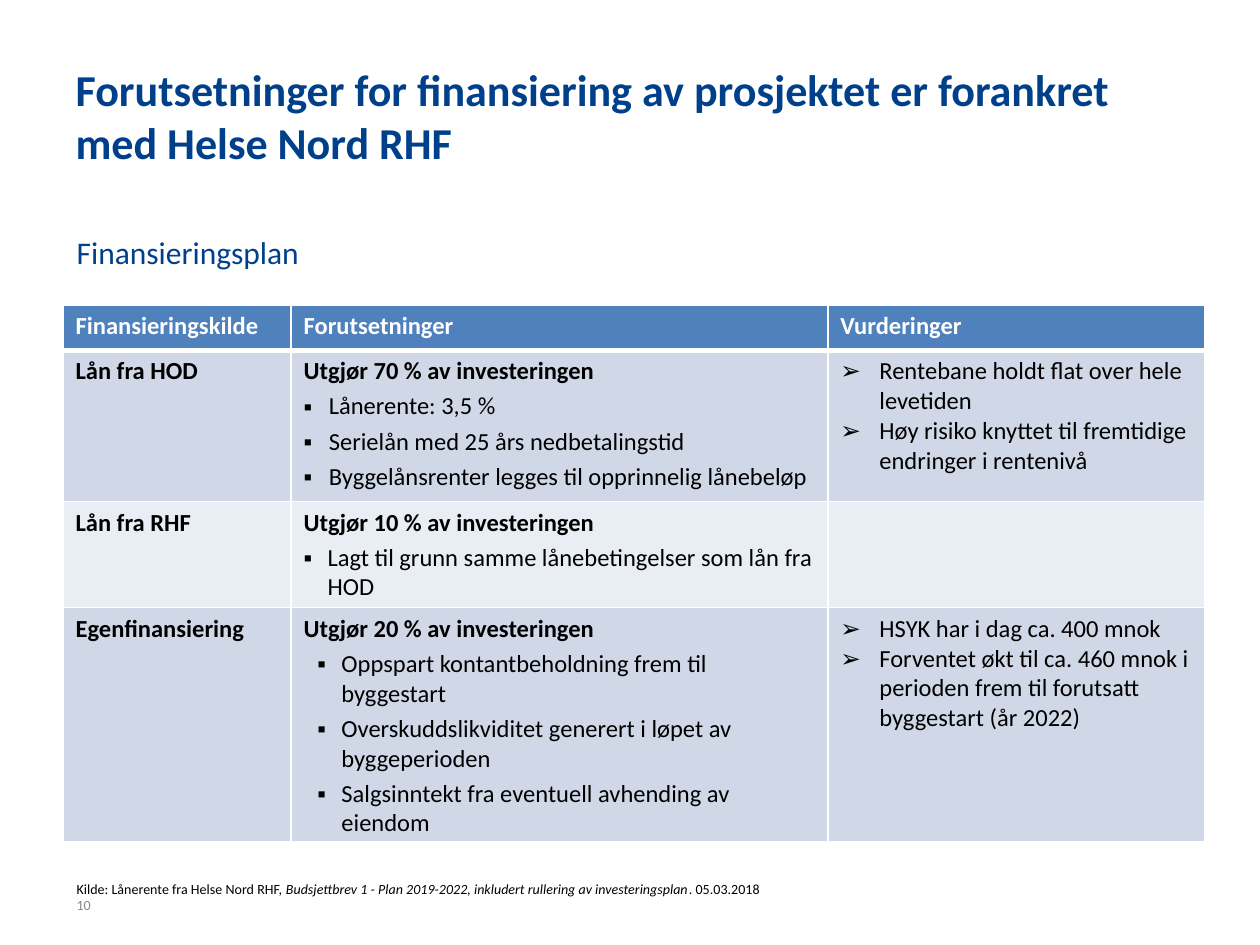
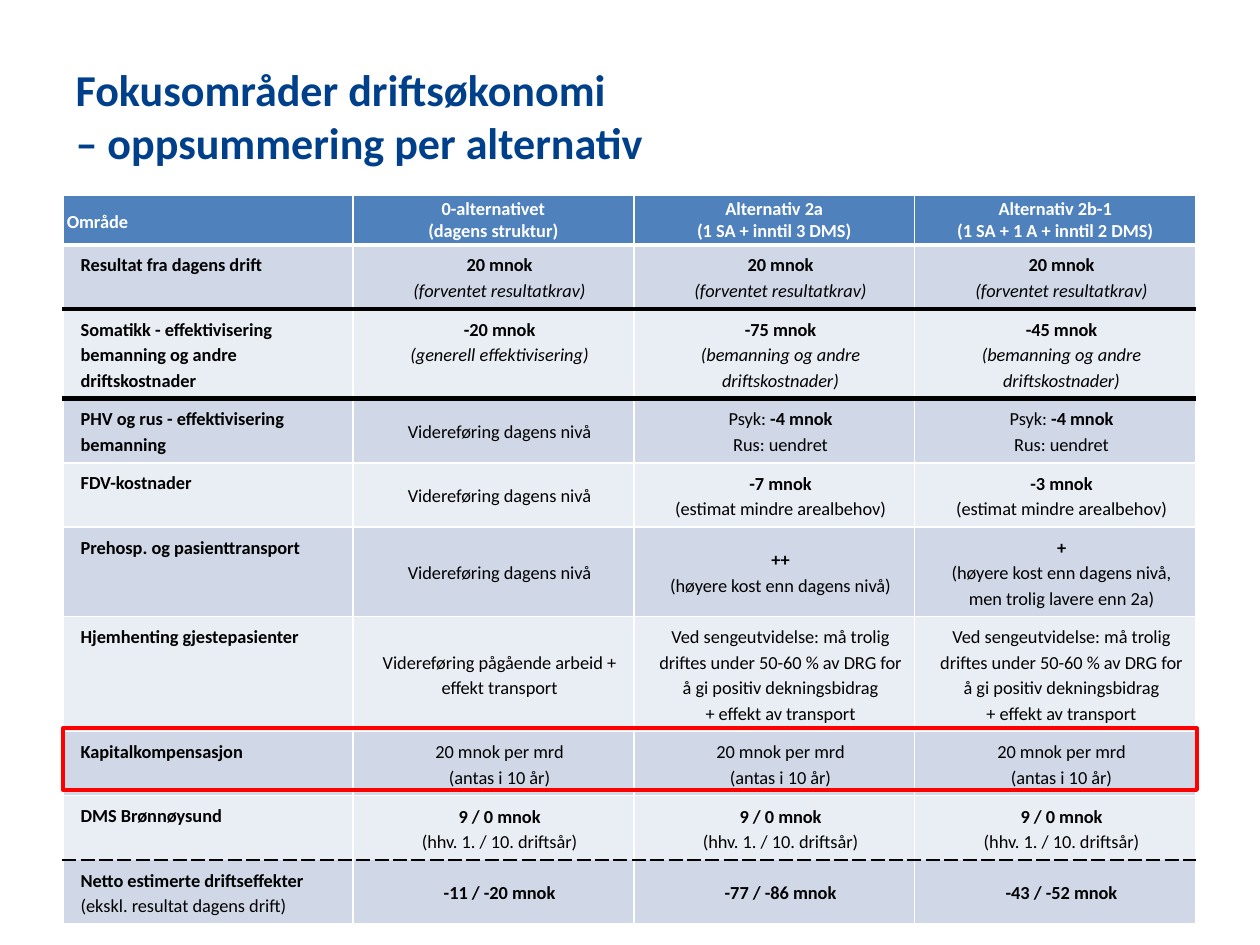
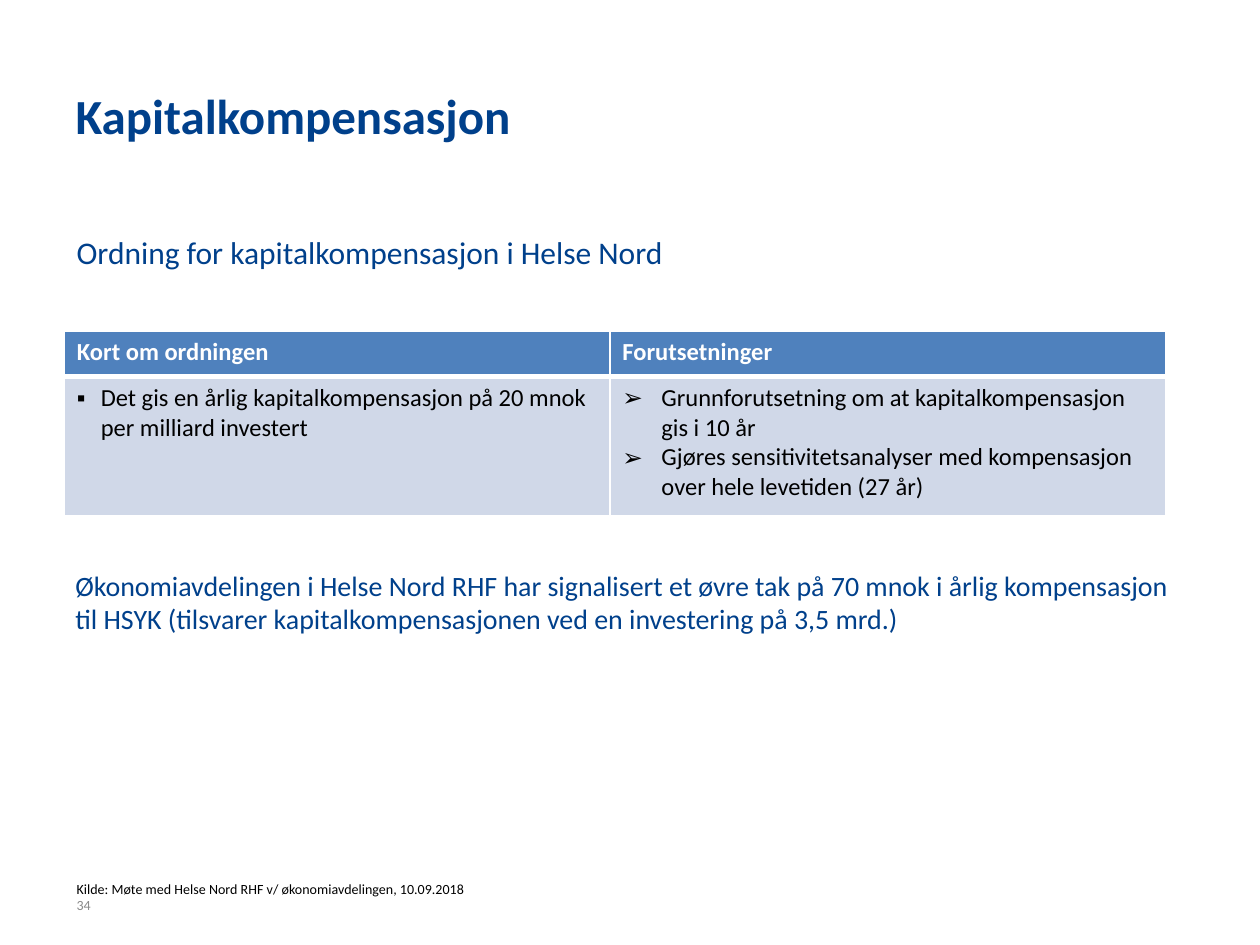
from dataclasses import dataclass

from lxml import etree
from pptx import Presentation
from pptx.dml.color import RGBColor
from pptx.enum.shapes import MSO_SHAPE
from pptx.enum.text import MSO_ANCHOR, MSO_AUTO_SIZE, PP_ALIGN
from pptx.oxml.ns import qn
from pptx.util import Inches, Pt

LEFT, CENTER = PP_ALIGN.LEFT, PP_ALIGN.CENTER
TOP, MIDDLE = MSO_ANCHOR.TOP, MSO_ANCHOR.MIDDLE
NO_AUTOFIT = MSO_AUTO_SIZE.NONE
RECTANGLE = MSO_SHAPE.RECTANGLE

FONT = "Calibri"
COLORS = {
    "heading": "00408B",
    "header": "4F81BD",
    "band_dark": "D0D8E8",
    "band_light": "E9EDF4",
    "white": "FFFFFF",
    "black": "000000",
    "page": "898989",
    "highlight": "FF0000",
}
TITLE_BOX = (0.5, 0.52, 9, 0.79)
SUBTITLE_BOX = (0.51, 1.8, 9.21, 0.62)
SOURCE_BOX = (0.51, 6.92, 7, 0.26)
PAGE_BOX = (0.51, 6.98, 2.33, 0.4)


@dataclass
class Line:
    """A paragraph: runs are (text, style), where style holds b and/or i."""
    runs: list
    bullet: str = ""
    left: float = 0
    hanging: float = 0
    after: float = 0
    spacing: float = 1
    align: int = LEFT


def plain(text, **layout):
    return Line([(text, "")], **layout)


def bold(text, **layout):
    return Line([(text, "b")], **layout)


def italic(text, **layout):
    return Line([(text, "i")], **layout)


def square(text, left=0.19, hanging=0.19):
    return plain(text, bullet="▪", left=left, hanging=hanging, after=3)


def arrow(text):
    return plain(text, bullet="➢", left=0.31, hanging=0.31)


def rgb(name):
    return RGBColor.from_string(COLORS[name])


def add_bullet(paragraph, line):
    properties = paragraph._p.get_or_add_pPr()
    properties.set("marL", str(Inches(line.left)))
    properties.set("indent", str(-Inches(line.hanging)))
    if line.bullet:
        etree.SubElement(properties, qn("a:buFont"), typeface="Arial")
        etree.SubElement(properties, qn("a:buChar"), char=line.bullet)


def write(frame, lines, size, color):
    for number, line in enumerate(lines):
        paragraph = frame.add_paragraph() if number else frame.paragraphs[0]
        add_bullet(paragraph, line)
        paragraph.alignment = line.align
        paragraph.line_spacing = line.spacing
        paragraph.space_before = Pt(0)
        paragraph.space_after = Pt(line.after)
        for text, style in line.runs:
            run = paragraph.add_run()
            run.text = text
            run.font.name = FONT
            run.font.size = Pt(size)
            run.font.bold = "b" in style
            run.font.italic = "i" in style
            run.font.color.rgb = rgb(color)


def add_text(slide, box, lines, size, color, anchor=TOP):
    frame = slide.shapes.add_textbox(*map(Inches, box)).text_frame
    frame.word_wrap = True
    frame.vertical_anchor = anchor
    write(frame, lines, size, color)


def add_titled_slide(deck, title_lines, size=25.2):
    slide = deck.slides.add_slide(deck.slide_layouts[5])
    title = slide.shapes.title
    title.left, title.top, title.width, title.height = map(Inches, TITLE_BOX)
    frame = title.text_frame
    frame.auto_size = NO_AUTOFIT
    frame.vertical_anchor = MIDDLE
    write(frame, [bold(text) for text in title_lines], size, "heading")
    return slide


def add_subtitle(slide, text):
    add_text(slide, SUBTITLE_BOX, [plain(text)], 18, "heading")


def add_footer(slide, source_runs, page):
    add_text(slide, PAGE_BOX, [plain(page)], 8, "page", MIDDLE)
    add_text(slide, SOURCE_BOX, [Line(source_runs, spacing=1.15)], 8, "black")


def set_border(cell, side, color="white", width=1, dash="solid"):
    """Set the border on side L, R, T or B, in that order and before the fill."""
    border = etree.SubElement(cell._tc.get_or_add_tcPr(), qn(f"a:ln{side}"), w=str(Pt(width)))
    fill = etree.SubElement(border, qn("a:solidFill"))
    etree.SubElement(fill, qn("a:srgbClr"), val=COLORS[color])
    etree.SubElement(border, qn("a:prstDash"), val=dash)


def add_grid(slide, corner, widths, heights, rows, size, rules=None):
    """Add a banded table; rules maps a row to the border below it."""
    rules = {0: {"width": 3}, **(rules or {})}
    table = slide.shapes.add_table(
        len(rows), len(widths), *map(Inches, (*corner, sum(widths), sum(heights)))
    ).table
    for column, width in zip(table.columns, widths):
        column.width = Inches(width)
    for r, (height, contents) in enumerate(zip(heights, rows)):
        table.rows[r].height = Inches(height)
        band = "header" if r == 0 else "band_dark" if r % 2 else "band_light"
        for c, lines in enumerate(contents):
            cell = table.cell(r, c)
            set_border(cell, "L")
            set_border(cell, "R")
            set_border(cell, "T", **rules.get(r - 1, {}))
            set_border(cell, "B", **rules.get(r, {}))
            cell.fill.solid()
            cell.fill.fore_color.rgb = rgb(band)
            write(cell.text_frame, lines, size, "black" if r else "white")
    return table


def build_financing(deck):
    slide = add_titled_slide(
        deck, ["Forutsetninger for finansiering av prosjektet er forankret med Helse Nord RHF"]
    )
    add_subtitle(slide, "Finansieringsplan")
    headers = ["Finansieringskilde", "Forutsetninger", "Vurderinger"]
    loan_terms = [
        "Lånerente: 3,5 %",
        "Serielån med 25 års nedbetalingstid",
        "Byggelånsrenter legges til opprinnelig lånebeløp",
    ]
    own_funds = [
        "Oppspart kontantbeholdning frem til byggestart",
        "Overskuddslikviditet generert i løpet av byggeperioden",
        "Salgsinntekt fra eventuell avhending av eiendom",
    ]
    rows = [
        [[bold(text)] for text in headers],
        [
            [bold("Lån fra HOD")],
            [bold("Utgjør 70 % av investeringen", after=3),
             *[square(text, 0.2, 0.2) for text in loan_terms]],
            [arrow("Rentebane holdt flat over hele levetiden"),
             arrow("Høy risiko knyttet til fremtidige endringer i rentenivå")],
        ],
        [
            [bold("Lån fra RHF")],
            [bold("Utgjør 10 % av investeringen", after=3),
             square("Lagt til grunn samme lånebetingelser som lån fra HOD")],
            [],
        ],
        [
            [bold("Egenfinansiering")],
            [bold("Utgjør 20 % av investeringen", after=3),
             *[square(text, left=0.3) for text in own_funds]],
            [arrow("HSYK har i dag ca. 400 mnok"),
             arrow("Forventet økt til ca. 460 mnok i perioden frem til forutsatt byggestart (år 2022)")],
        ],
    ]
    add_grid(slide, (0.5, 2.42), [1.81, 4.26, 2.99], [0.36, 1.2, 0.74, 1.31], rows, 14)
    source = [
        ("Kilde: Lånerente fra Helse Nord RHF, ", ""),
        ("Budsjettbrev 1 - Plan 2019-2022, inkludert rullering av investeringsplan", "i"),
        (". 05.03.2018", ""),
    ]
    add_footer(slide, source, "10")


def build_alternatives(deck):
    slide = add_titled_slide(deck, ["Fokusområder driftsøkonomi", "– oppsummering per alternativ"])
    value = {"left": 0.1, "spacing": 1.15, "align": CENTER}

    def amount(figure, note, note_style=plain):
        return [bold(figure, **value), note_style(note, **value)]

    def remark(*texts):
        return [plain(text, **value) for text in texts]

    def area(text, note=""):
        runs = [(text, "b")] + ([(note, "")] if note else [])
        return [Line(runs, left=0.04, spacing=1.15)]

    unchanged = remark("Videreføring dagens nivå")
    result = amount("20 mnok", "(forventet resultatkrav)", italic)
    staffing = "(bemanning og andre driftskostnader)"
    psychiatry = [Line([("Psyk: ", ""), ("-4 mnok", "b")], **value), *remark("Rus: uendret")]
    repatriation = remark(
        "Ved sengeutvidelse: må trolig driftes under 50-60 % av DRG for å gi positiv dekningsbidrag",
        "+ effekt av transport",
    )
    compensation = remark("20 mnok per mrd", "(antas i 10 år)")
    local_centre = amount("9 / 0 mnok", "(hhv. 1. / 10. driftsår)")
    alternatives = [
        ("0-alternativet", "(dagens struktur)"),
        ("Alternativ 2a", "(1 SA + inntil 3 DMS)"),
        ("Alternativ 2b-1", "(1 SA + 1 A + inntil 2 DMS)"),
    ]
    net_effects = ["-11 / -20 mnok", "-77 / -86 mnok", "-43 / -52 mnok"]
    rows = [
        [[bold("Område", spacing=1.15)],
         *[[bold(text, align=CENTER) for text in pair] for pair in alternatives]],
        [area("Resultat fra dagens drift"), *[result] * 3],
        [area("Somatikk - effektivisering bemanning og andre driftskostnader"),
         amount("-20 mnok", "(generell effektivisering)", italic),
         amount("-75 mnok", staffing, italic),
         amount("-45 mnok", staffing, italic)],
        [area("PHV og rus - effektivisering bemanning"), unchanged, *[psychiatry] * 2],
        [area("FDV-kostnader"), unchanged,
         amount("-7 mnok", "(estimat mindre arealbehov)"),
         amount("-3 mnok", "(estimat mindre arealbehov)")],
        [area("Prehosp. og pasienttransport"), unchanged,
         amount("++", "(høyere kost enn dagens nivå)"),
         amount("+", "(høyere kost enn dagens nivå, men trolig lavere enn 2a)")],
        [area("Hjemhenting gjestepasienter"),
         remark("Videreføring pågående arbeid + effekt transport"), *[repatriation] * 2],
        [area("Kapitalkompensasjon"), *[compensation] * 3],
        [area("DMS Brønnøysund"), *[local_centre] * 3],
        [area("Netto estimerte driftseffekter ", "(ekskl. resultat dagens drift)"),
         *[[bold(text, **value)] for text in net_effects]],
    ]
    thick = {"color": "black", "width": 3}
    dashed = {"color": "black", "dash": "sysDash"}
    table = add_grid(
        slide, (0.5, 1.55), [2.3] + [2.23] * 3, [0.28] + [0.51] * 8 + [0.43], rows, 10.5,
        {1: thick, 2: thick, 8: dashed},
    )
    last = len(rows) - 1
    for r in range(len(rows)):
        for c in range(4):
            cell = table.cell(r, c)
            centred = r in (0, last) or (r > 2 and c > 0)
            cell.vertical_anchor = MIDDLE if centred else TOP
            if r == 0:
                cell.margin_left = Inches(0 if c else 0.03)
                cell.margin_right = 0
                cell.margin_top = cell.margin_bottom = Inches(0.02 if c else 0)
    add_highlight(slide, (0.5, 5.78, 9, 0.49))


def add_highlight(slide, box):
    frame = slide.shapes.add_shape(RECTANGLE, *map(Inches, box))
    frame.shadow.inherit = False
    frame.fill.background()
    frame.line.color.rgb = rgb("highlight")
    frame.line.width = Pt(2.25)


def build_compensation(deck):
    slide = add_titled_slide(deck, ["Kapitalkompensasjon"], 28)
    add_subtitle(slide, "Ordning for kapitalkompensasjon i Helse Nord")
    rows = [
        [[bold("Kort om ordningen")], [bold("Forutsetninger")]],
        [
            [square("Det gis en årlig kapitalkompensasjon på 20 mnok per milliard investert")],
            [arrow("Grunnforutsetning om at kapitalkompensasjon gis i 10 år"),
             arrow("Gjøres sensitivitetsanalyser med kompensasjon over hele levetiden (27 år)")],
        ],
    ]
    add_grid(slide, (0.51, 2.63), [4.33, 4.41], [0.36, 1.1], rows, 14)
    ceiling = (
        "Økonomiavdelingen i Helse Nord RHF har signalisert et øvre tak på 70 mnok i årlig "
        "kompensasjon til HSYK (tilsvarer kapitalkompensasjonen ved en investering på 3,5 mrd.)"
    )
    add_text(slide, (0.5, 4.46, 9, 2.13), [plain(ceiling)], 16, "heading")
    source = [("Kilde: Møte med Helse Nord RHF v/ økonomiavdelingen, 10.09.2018", "")]
    add_footer(slide, source, "34")


def main():
    deck = Presentation()
    deck.slide_width, deck.slide_height = Inches(10), Inches(7.5)
    build_financing(deck)
    build_alternatives(deck)
    build_compensation(deck)
    deck.save("out.pptx")


if __name__ == "__main__":
    main()
